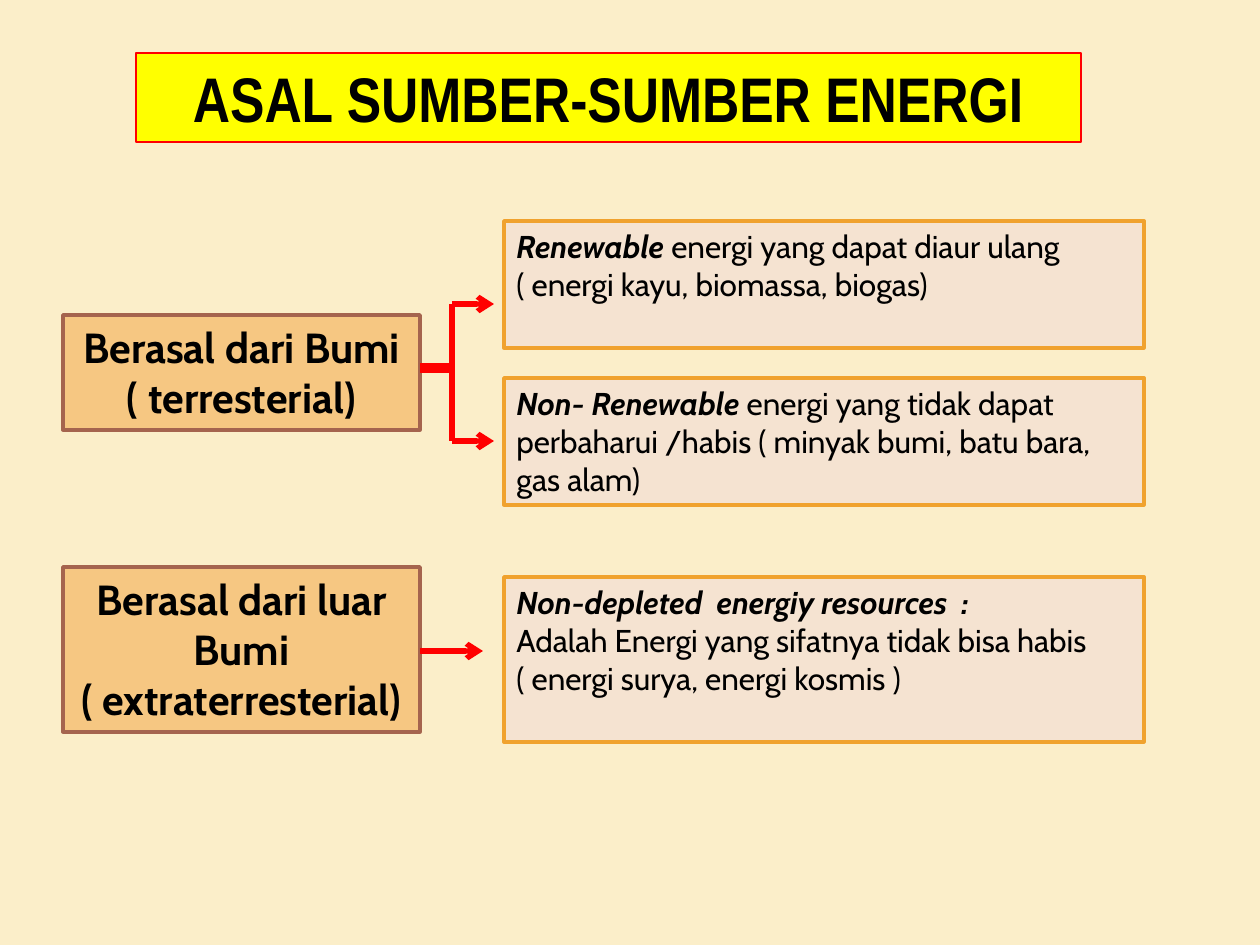
from dataclasses import dataclass

from lxml.etree import SubElement
from pptx import Presentation
from pptx.dml.color import RGBColor
from pptx.enum.shapes import MSO_CONNECTOR, MSO_SHAPE
from pptx.enum.text import MSO_ANCHOR, PP_ALIGN
from pptx.oxml.ns import qn
from pptx.util import Pt

EMU_PER_PX = 914400 / 126


def px(n):
    return round(n * EMU_PER_PX)


def rgb(value):
    return RGBColor.from_string(value)


@dataclass(frozen=True)
class Theme:
    background: str = "FBEEC9"
    text: str = "000000"
    title_fill: str = "FFFF00"
    accent: str = "FF0000"
    origin_fill: str = "F6C782"
    origin_line: str = "A5644E"
    detail_fill: str = "F5E3D1"
    detail_line: str = "F0A22E"
    title_font: str = "Arial Narrow"
    body_font: str = "Cabin"
    title_size: int = 36
    origin_size: int = 24
    detail_size: int = 18


class Deck:
    """Draws the elements of the energy slide in one theme."""

    def __init__(self, slide, theme):
        self.slide = slide
        self.theme = theme
        fill = slide.background.fill
        fill.solid()
        fill.fore_color.rgb = rgb(theme.background)

    def box(self, area, fill, line, width, paragraphs, font, size, bold, align):
        sp = self.slide.shapes.add_shape(MSO_SHAPE.RECTANGLE, *map(px, area))
        sp.shadow.inherit = False
        sp.fill.solid()
        sp.fill.fore_color.rgb = rgb(fill)
        sp.line.color.rgb = rgb(line)
        sp.line.width = Pt(width)
        tf = sp.text_frame
        tf.word_wrap = True
        tf.vertical_anchor = MSO_ANCHOR.TOP
        for i, runs in enumerate(paragraphs):
            p = tf.add_paragraph() if i else tf.paragraphs[0]
            p.alignment = align
            p.font.name = font
            p.font.size = Pt(size)
            p.font.bold = bold
            p.font.color.rgb = rgb(self.theme.text)
            for text, emphasis in runs:
                r = p.add_run()
                r.text = text
                if emphasis:
                    r.font.bold = r.font.italic = True

    def title(self, area, text):
        t = self.theme
        self.box(area, t.title_fill, t.accent, 0.75, [[(text, False)]],
                 t.title_font, t.title_size, True, PP_ALIGN.CENTER)

    def origin(self, top, height, *lines):
        t = self.theme
        self.box((63, top, 357, height), t.origin_fill, t.origin_line, 2,
                 [[(line, False)] for line in lines],
                 t.body_font, t.origin_size, True, PP_ALIGN.CENTER)

    def detail(self, top, height, *paragraphs):
        t = self.theme
        self.box((504, top, 640, height), t.detail_fill, t.detail_line, 2,
                 paragraphs, t.body_font, t.detail_size, False, PP_ALIGN.LEFT)

    def line(self, x1, y1, x2, y2, width=3, arrow=False):
        cxn = self.slide.shapes.add_connector(
            MSO_CONNECTOR.STRAIGHT, *map(px, (x1, y1, x2, y2)))
        cxn.line.color.rgb = rgb(self.theme.accent)
        cxn.line.width = Pt(width)
        if arrow:
            SubElement(cxn.line._get_or_add_ln(), qn("a:tailEnd"), type="arrow")
        SubElement(cxn._element.spPr, qn("a:effectLst"))


def main():
    prs = Presentation()
    prs.slide_width, prs.slide_height = px(1260), px(945)
    deck = Deck(prs.slides.add_slide(prs.slide_layouts[6]), Theme())

    deck.title((136, 53, 945, 89), "ASAL SUMBER-SUMBER ENERGI")
    deck.origin(315, 115, "Berasal dari Bumi", "( terresterial)")
    deck.origin(567, 165, "Berasal dari luar Bumi", "( extraterresterial)")

    deck.detail(221, 127,
                [("Renewable ", True), ("energi yang dapat diaur ulang", False)],
                [("( energi kayu, biomassa, biogas)", False)])
    deck.detail(378, 127,
                [("Non- Renewable ", True),
                 ("energi yang tidak dapat perbaharui /habis "
                  "( minyak bumi, batu bara, gas alam)", False)])
    deck.detail(577, 165,
                [("Non-depleted  energiy resources  :", True)],
                [("Adalah Energi yang sifatnya tidak bisa habis", False)],
                [("( energi surya, energi kosmis )", False)])

    origin_right, fork, upper, lower = 420, 452, 304, 441
    deck.line(origin_right, 368, fork, 368, width=6)
    deck.line(fork, upper, fork, lower)
    for y in (upper, lower):
        deck.line(fork, y, 494, y, arrow=True)
    deck.line(origin_right, 651, 483, 651, arrow=True)

    prs.save("out.pptx")


if __name__ == "__main__":
    main()
